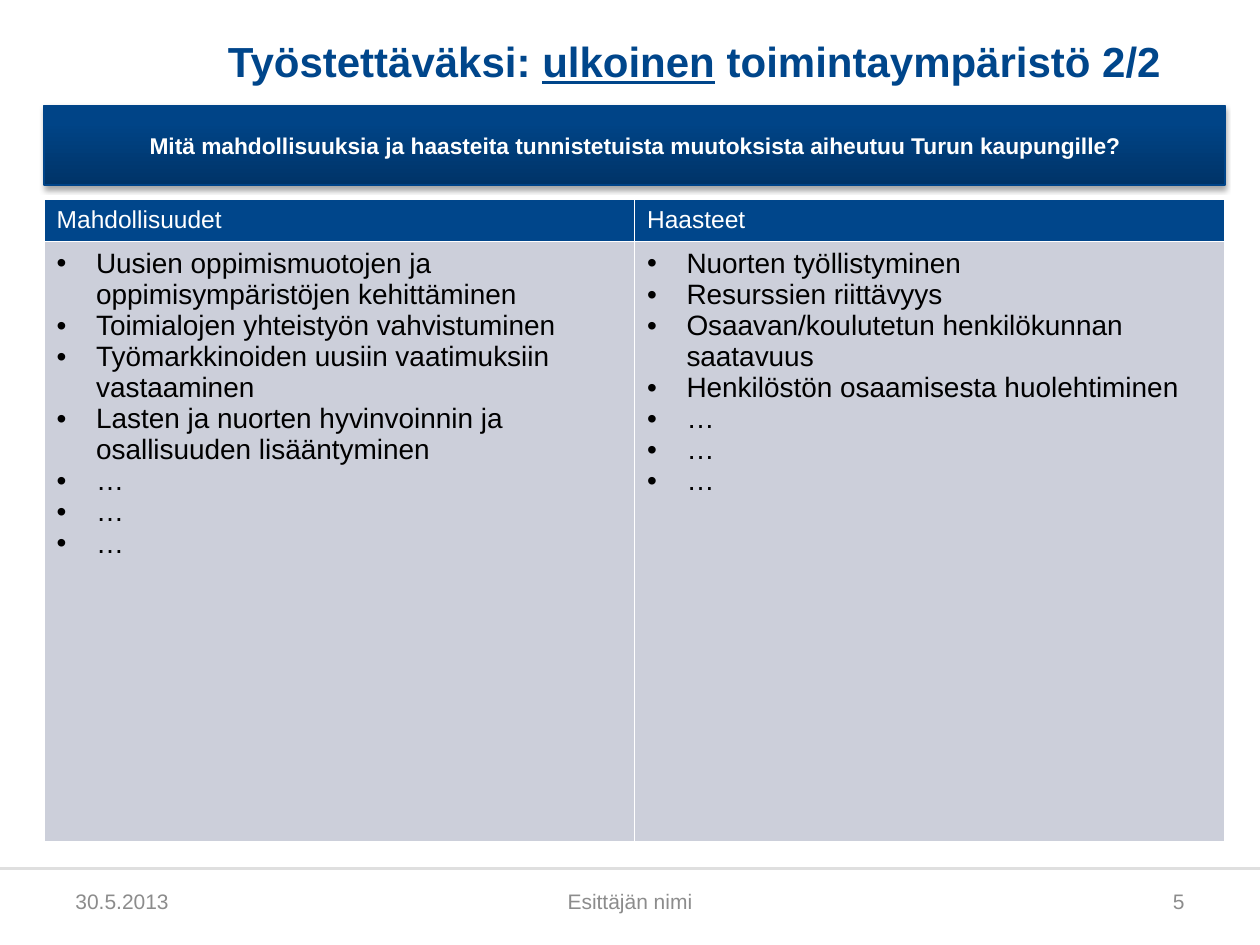
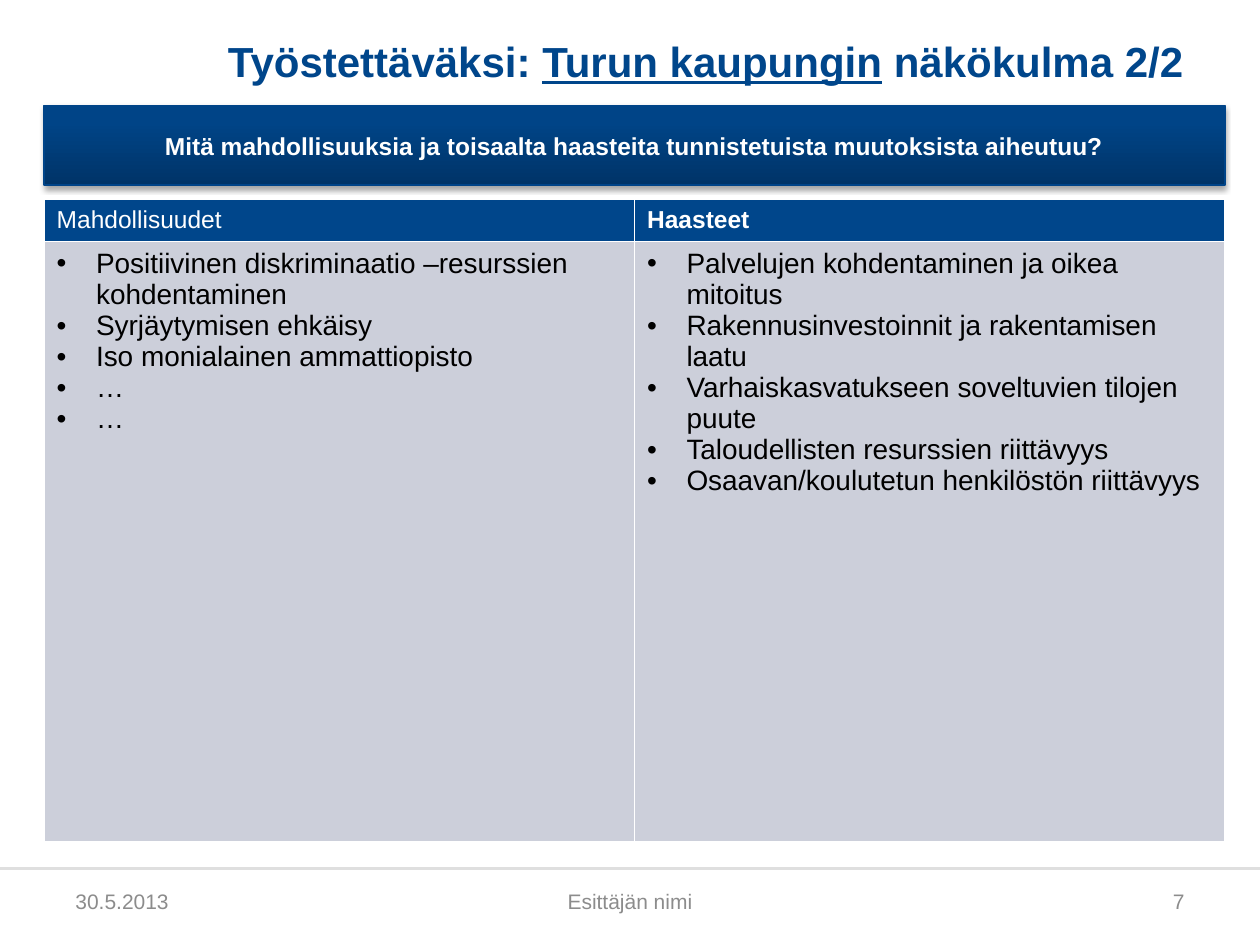
"""Builds two slides that set opportunities against challenges."""
import pptx
import pptx.dml.color
import pptx.enum.shapes
import pptx.enum.text
import pptx.oxml
import pptx.oxml.ns
import pptx.util
from pptx.util import Pt

COLORS = {
    "blue": "00468B", "band_dark": "003468", "band_light": "004487", "band_line": "004488",
    "cell": "CCCFDA", "white": "FFFFFF", "black": "000000", "footer": "8C8C8C", "rule": "DFDFDF",
}
ALIGN = pptx.enum.text.PP_ALIGN
MIDDLE = pptx.enum.text.MSO_ANCHOR.MIDDLE
RECTANGLE = pptx.enum.shapes.MSO_SHAPE.RECTANGLE
NAMESPACE = pptx.oxml.ns.nsdecls("a")
LEFT, WIDTH = 25.2, 674.8
FOOTER_TOP = 496.4
INDENT = 22.5


def color(name):
    return pptx.dml.color.RGBColor.from_string(COLORS[name])


def element(xml):
    return pptx.oxml.parse_xml(xml.replace(">", f" {NAMESPACE}>", 1))


def write(frame, paragraphs, size=16, ink="black", bold=False, align=ALIGN.LEFT, bullet=False):
    """Each paragraph is a string or a list of (text, underlined) pairs."""
    frame.word_wrap = True
    for index, content in enumerate(paragraphs):
        para = frame.add_paragraph() if index else frame.paragraphs[0]
        para.alignment = align
        if bullet:
            properties = para._p.get_or_add_pPr()
            properties.set("marL", str(Pt(INDENT)))
            properties.set("indent", str(-Pt(INDENT)))
            properties.append(element('<a:buFont typeface="Arial"></a:buFont>'))
            properties.append(element('<a:buChar char="•"></a:buChar>'))
        pieces = [(content, False)] if isinstance(content, str) else content
        for text, underlined in pieces:
            span = para.add_run()
            span.text = text
            span.font.name = "Arial"
            span.font.size = Pt(size)
            span.font.bold = bold
            span.font.underline = underlined
            span.font.color.rgb = color(ink)


class Deck:
    """Holds the presentation, its style and the current page."""

    def __init__(self):
        self.deck = pptx.Presentation()
        self.deck.slide_width, self.deck.slide_height = Pt(720), Pt(540)
        self.page = None

    def add_page(self, number):
        self.page = self.deck.slides.add_slide(self.deck.slide_layouts[6])
        self.rectangle(0, 496.8, 720, 43.2)
        self.rule(0, FOOTER_TOP, 720)
        self.label(36, 500.4, 168, 28.8, ["30.5.2013"], size=12, ink="footer")
        self.label(246, 500.4, 228, 28.8, ["Esittäjän nimi"], size=12, ink="footer",
                   align=ALIGN.CENTER)
        self.label(516, 500.4, 168, 28.8, [str(number)], size=12, ink="footer",
                   align=ALIGN.RIGHT)

    def rectangle(self, left, top, width, height):
        box = self.page.shapes.add_shape(RECTANGLE, Pt(left), Pt(top), Pt(width), Pt(height))
        box.fill.solid()
        box.fill.fore_color.rgb = color("white")
        box.line.fill.background()
        box.shadow.inherit = False
        effects = box._element.spPr.find(pptx.oxml.ns.qn("a:effectLst"))
        effects.append(element(
            f'<a:outerShdw blurRad="{Pt(3.1)}" dist="{Pt(1.8)}" dir="5400000" rotWithShape="0">'
            f'<a:srgbClr val="{COLORS["black"]}"><a:alpha val="35000"/></a:srgbClr>'
            '</a:outerShdw>'))
        return box

    def rule(self, left, top, width):
        line = self.page.shapes.add_connector(
            pptx.enum.shapes.MSO_CONNECTOR.STRAIGHT,
            Pt(left), Pt(top), Pt(left + width), Pt(top))
        line.line.color.rgb = color("rule")
        line.line.width = Pt(1.75)
        line._element.spPr.append(element("<a:effectLst></a:effectLst>"))

    def label(self, left, top, width, height, paragraphs, **style):
        box = self.page.shapes.add_textbox(Pt(left), Pt(top), Pt(width), Pt(height))
        box.text_frame.vertical_anchor = MIDDLE
        write(box.text_frame, paragraphs, **style)
        return box

    def title(self, pieces):
        frame = self.label(130.3, 3.6, 592.6, 62.6, [pieces],
                           size=24, ink="blue", bold=True).text_frame
        frame.margin_left = frame.margin_top = frame.margin_right = frame.margin_bottom = 0

    def band(self, question, size):
        box = self.rectangle(LEFT, 60.4, WIDTH, 45.4)
        box.fill.gradient()
        box.fill.gradient_angle = 90
        stops = zip(box.fill.gradient_stops, (0, 0.8), ("band_dark", "band_light"))
        for stop, position, name in stops:
            stop.position = position
            stop.color.rgb = color(name)
        box.line.color.rgb = color("band_line")
        box.line.width = Pt(0.75)
        box.text_frame.vertical_anchor = MIDDLE
        write(box.text_frame, [question], size=size, ink="white", bold=True, align=ALIGN.CENTER)

    def cell(self, cell, fill, paragraphs, **style):
        properties = cell._tc.get_or_add_tcPr()
        for side in "LRTB":
            properties.append(element(
                f'<a:ln{side} w="{Pt(1)}"><a:solidFill><a:srgbClr val="{COLORS["white"]}"/>'
                f'</a:solidFill></a:ln{side}>'))
        cell.fill.solid()
        cell.fill.fore_color.rgb = color(fill)
        write(cell.text_frame, paragraphs, **style)

    def comparison(self, columns, bold_headings):
        heights = (22.3, 342.7)
        table = self.page.shapes.add_table(
            2, len(columns), Pt(LEFT), Pt(114), Pt(WIDTH), Pt(sum(heights))).table
        table.horz_banding = False
        for row, height in zip(table.rows, heights):
            row.height = Pt(height)
        for index, (heading, points) in enumerate(columns.items()):
            table.columns[index].width = Pt(WIDTH / len(columns))
            self.cell(table.cell(0, index), "blue", [heading], size=14, ink="white",
                      bold=heading in bold_headings)
            self.cell(table.cell(1, index), "cell", points, bullet=True)


SLIDES = [
    {
        "number": 5,
        "title": ("ulkoinen", "toimintaympäristö"),
        "question": "Mitä mahdollisuuksia ja haasteita tunnistetuista muutoksista "
                    "aiheutuu Turun kaupungille?",
        "question_size": 13,
        "bold_headings": [],
        "columns": {
            "Mahdollisuudet": [
                "Uusien oppimismuotojen ja oppimisympäristöjen kehittäminen",
                "Toimialojen yhteistyön vahvistuminen",
                "Työmarkkinoiden uusiin vaatimuksiin vastaaminen",
                "Lasten ja nuorten hyvinvoinnin ja osallisuuden lisääntyminen",
                "…", "…", "…",
            ],
            "Haasteet": [
                "Nuorten työllistyminen",
                "Resurssien riittävyys",
                "Osaavan/koulutetun henkilökunnan saatavuus",
                "Henkilöstön osaamisesta huolehtiminen",
                "…", "…", "…",
            ],
        },
    },
    {
        "number": 7,
        "title": ("Turun kaupungin", "näkökulma"),
        "question": "Mitä mahdollisuuksia ja toisaalta haasteita tunnistetuista "
                    "muutoksista aiheutuu?",
        "question_size": 14,
        "bold_headings": ["Haasteet"],
        "columns": {
            "Mahdollisuudet": [
                "Positiivinen diskriminaatio –resurssien kohdentaminen",
                "Syrjäytymisen ehkäisy",
                "Iso monialainen ammattiopisto",
                "…", "…",
            ],
            "Haasteet": [
                "Palvelujen kohdentaminen ja oikea mitoitus",
                "Rakennusinvestoinnit ja rakentamisen laatu",
                "Varhaiskasvatukseen soveltuvien tilojen puute",
                "Taloudellisten resurssien riittävyys",
                "Osaavan/koulutetun henkilöstön riittävyys",
            ],
        },
    },
]


def main():
    builder = Deck()
    for slide in SLIDES:
        subject, theme = slide["title"]
        builder.add_page(slide["number"])
        builder.title([("Työstettäväksi: ", False), (subject, True), (f" {theme} 2/2", False)])
        builder.comparison(slide["columns"], slide["bold_headings"])
        builder.band(slide["question"], slide["question_size"])
    builder.deck.save("out.pptx")


if __name__ == "__main__":
    main()
